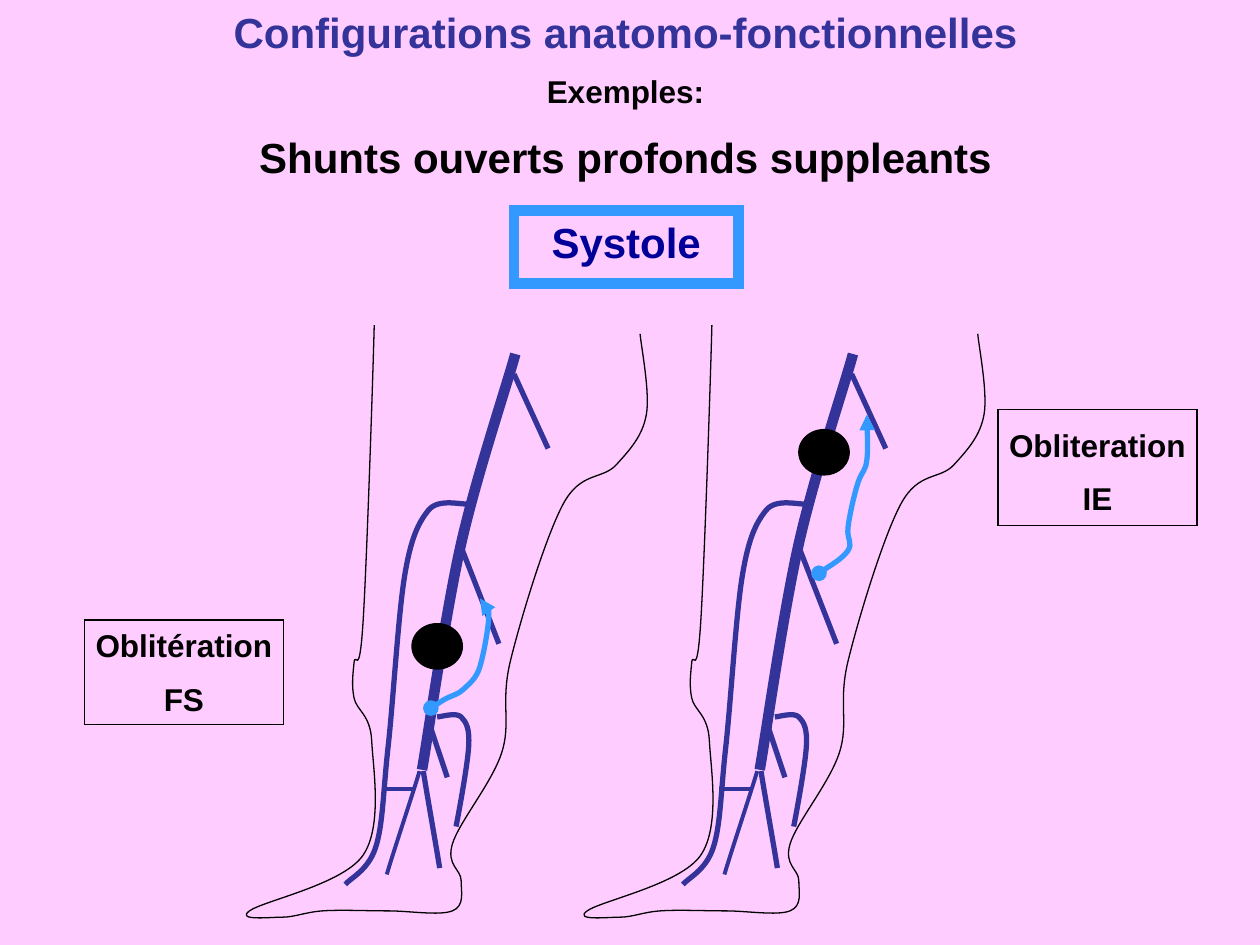
from lxml import etree
from pptx import Presentation
from pptx.dml.color import RGBColor
from pptx.enum.shapes import MSO_CONNECTOR, MSO_SHAPE
from pptx.enum.text import MSO_ANCHOR, MSO_AUTO_SIZE, PP_ALIGN
from pptx.oxml.ns import qn
from pptx.util import Inches, Pt

OVAL, RECTANGLE = MSO_SHAPE.OVAL, MSO_SHAPE.RECTANGLE
STRAIGHT = MSO_CONNECTOR.STRAIGHT
TOP, CENTER, NO_FIT = MSO_ANCHOR.TOP, PP_ALIGN.CENTER, MSO_AUTO_SIZE.NONE

# The slide is a grid of 1000 columns by 750 rows; positions are (column, row).
COLUMNS, ROWS = 1000, 750
CELL = Inches(10) // COLUMNS
LEG_STEP = 268
OBSTRUCTION_SIZE = (40, 36)

COLORS = {"background": "FFCCFF", "ink": "000000", "vein": "333399",
          "flow": "3399FF", "phase": "000099"}
THIN, FINE, MEDIUM, THICK = 0.75, 2.25, 3, 6

# Curves are given only by the knots they pass through, for the left leg.
SHIN = [(297, 258), (288, 496), (281, 526), (281, 554), (295, 588), (288, 679)]
FOOT = [(198, 723), (224, 728), (256, 723), (308, 723), (359, 723), (366, 699)]
CALF = [(359, 670), (398, 598), (405, 525)]
THIGH = [(447, 400), (489, 369), (513, 329), (508, 265)]
LEG_OUTLINE = SHIN + FOOT + CALF + THIGH

VEINS = {
    "deep trunk": (THICK, [(409, 281), (365, 436), (335, 611)]),
    "great saphenous": (MEDIUM, [(372, 400), (340, 405), (321, 458),
                                 (308, 593), (298, 673), (274, 702)]),
    "small saphenous": (MEDIUM, [(347, 569), (366, 569), (372, 593),
                                 (362, 656)]),
    "deep thigh": (MEDIUM, [(366, 434), (396, 511)]),
    "anterior leg": (FINE, [(333, 612), (307, 694)]),
    "posterior leg": (MEDIUM, [(336, 612), (349, 689)]),
}
BRANCHES = {
    "calf": (MEDIUM, (342, 578), (355, 617)),
    "perforator": (FINE, (303, 626), (329, 626)),
    "pelvic": (MEDIUM, (408, 297), (435, 356)),
}

# Each leg has its own blocked site and its own bypass flow.
LEGS = [
    {"obstruction": (327, 495),
     "flow": [(342, 562), (355, 554), (368, 547), (381, 529), (388, 488),
              (381, 475)]},
    {"obstruction": (634, 341),
     "flow": [(650, 455), (673, 437), (673, 419), (681, 383), (688, 365),
              (688, 329)]},
]
# Frame box, caption top, caption width, caption lines.
LABELS = [
    ((67, 492, 158, 83), 492, 183, ["Oblitération", "FS"]),
    ((792, 325, 158, 92), 333, 167, ["Obliteration", "IE"]),
]


def color(name):
    return RGBColor.from_string(COLORS[name])


def cells(*counts):
    return [count * CELL for count in counts]


def shifted(point, columns):
    return point[0] + columns, point[1]


def set_line(line, name, width):
    line.color.rgb = color(name)
    line.width = Pt(width)


def smooth_points(knots):
    """Return two controls and an end point for each span between knots.

    The tangent at a knot is a sixth of the way from its previous to its next
    neighbour; an end knot stands in for its own missing neighbour.
    """
    padded = [knots[0], *knots, knots[-1]]
    points = []
    for before, start, end, after in zip(padded, padded[1:], padded[2:],
                                         padded[3:]):
        leaving = [s + (e - b) / 6 for b, s, e in zip(before, start, end)]
        arriving = [e - (a - s) / 6 for s, e, a in zip(start, end, after)]
        points += [leaving, arriving, end]
    return points


def add_curve(slide, knots, name, width):
    """Draw an open smooth curve through the knots."""
    builder = slide.shapes.build_freeform(*knots[0], scale=CELL)
    builder.add_line_segments(smooth_points(knots), close=False)
    curve = builder.convert_to_shape()
    segments = list(curve.element.iter(qn("a:lnTo")))
    outline = segments[0].getparent()
    for first in range(0, len(segments), 3):
        cubic = etree.SubElement(outline, qn("a:cubicBezTo"))
        for segment in segments[first:first + 3]:
            cubic.append(segment[0])
            outline.remove(segment)
    curve.shadow.inherit = False
    curve.fill.background()
    set_line(curve.line, name, width)
    return curve


def add_flow(slide, knots):
    """Draw a blood flow, from a dot to an arrowhead."""
    flow = add_curve(slide, knots, "flow", MEDIUM)
    stroke = flow.element.spPr.find(qn("a:ln"))
    for end, kind in {"a:headEnd": "oval", "a:tailEnd": "triangle"}.items():
        etree.SubElement(stroke, qn(end), type=kind)


def add_branch(slide, start, end, width):
    branch = slide.shapes.add_connector(STRAIGHT, *cells(*start, *end))
    set_line(branch.line, "vein", width)
    etree.SubElement(branch.element.spPr, qn("a:effectLst"))


def add_solid(slide, kind, box, fill, line, width):
    solid = slide.shapes.add_shape(kind, *cells(*box))
    solid.shadow.inherit = False
    solid.fill.solid()
    solid.fill.fore_color.rgb = color(fill)
    set_line(solid.line, line, width)
    stroke = solid.element.spPr.find(qn("a:ln"))
    etree.SubElement(stroke, qn("a:miter"), lim="800000")
    return solid


def add_leg(slide, shift, obstruction, flow):
    def placed(points):
        return [shifted(point, shift) for point in points]

    add_curve(slide, placed(LEG_OUTLINE), "ink", THIN)
    for width, knots in VEINS.values():
        add_curve(slide, placed(knots), "vein", width)
    for width, *ends in BRANCHES.values():
        add_branch(slide, *placed(ends), width)
    add_solid(slide, OVAL, obstruction + OBSTRUCTION_SIZE, "ink", "ink", THIN)
    add_flow(slide, flow)


def write_lines(shape, lines, **margins):
    """Fill a shape with bold centred lines of (text, size, colour name)."""
    frame = shape.text_frame
    frame_format = {"word_wrap": True, "auto_size": NO_FIT,
                    "vertical_anchor": TOP, **margins}
    for key, value in frame_format.items():
        setattr(frame, key, value)
    for index, (text, size, name) in enumerate(lines):
        paragraph = frame.add_paragraph() if index else frame.paragraphs[0]
        paragraph.alignment = CENTER
        paragraph.space_before = Pt(size / 2 if index else 0)
        run = paragraph.add_run()
        run.text = text
        font_format = {"name": "Arial", "size": Pt(size), "bold": True}
        for key, value in font_format.items():
            setattr(run.font, key, value)
        run.font.color.rgb = color(name)


def add_label(slide, box, caption_top, caption_width, lines):
    """Add a one-cell bordered table with its caption centred over it."""
    left, _, frame_width, height = box
    frame = slide.shapes.add_table(1, 1, *cells(*box))
    frame.table.first_row = frame.table.horz_banding = False
    frame.table.cell(0, 0).fill.background()
    properties = next(frame.element.iter(qn("a:tcPr")))
    for index, side in enumerate("LRTB"):
        border = etree.Element(qn(f"a:ln{side}"), w=str(Pt(1)))
        paint = etree.SubElement(border, qn("a:solidFill"))
        etree.SubElement(paint, qn("a:srgbClr"), val=COLORS["ink"])
        properties.insert(index, border)
    caption = slide.shapes.add_textbox(
        *cells(left, caption_top, caption_width, 85))
    write_lines(caption, [(text, 18, "ink") for text in lines], margin_left=0,
                margin_right=(caption_width - frame_width) * CELL)


def add_title(slide):
    title = slide.shapes.title
    title.left, title.top, title.width, title.height = cells(150, 0, 693, 245)
    write_lines(title, [("Configurations anatomo-fonctionnelles", 24, "vein"),
                        ("Exemples:", 18, "ink"),
                        ("Shunts ouverts profonds suppleants", 24, "ink")])


def main():
    deck = Presentation()
    deck.slide_width, deck.slide_height = cells(COLUMNS, ROWS)
    slide = deck.slides.add_slide(deck.slide_layouts[5])
    slide.background.fill.solid()
    slide.background.fill.fore_color.rgb = color("background")

    add_title(slide)
    for index, leg in enumerate(LEGS):
        add_leg(slide, index * LEG_STEP, **leg)
    phase = add_solid(slide, RECTANGLE, (408, 167, 178, 58),
                      "background", "flow", THICK)
    write_lines(phase, [("Systole", 24, "phase")])
    for label in LABELS:
        add_label(slide, *label)
    deck.save("out.pptx")


if __name__ == "__main__":
    main()
